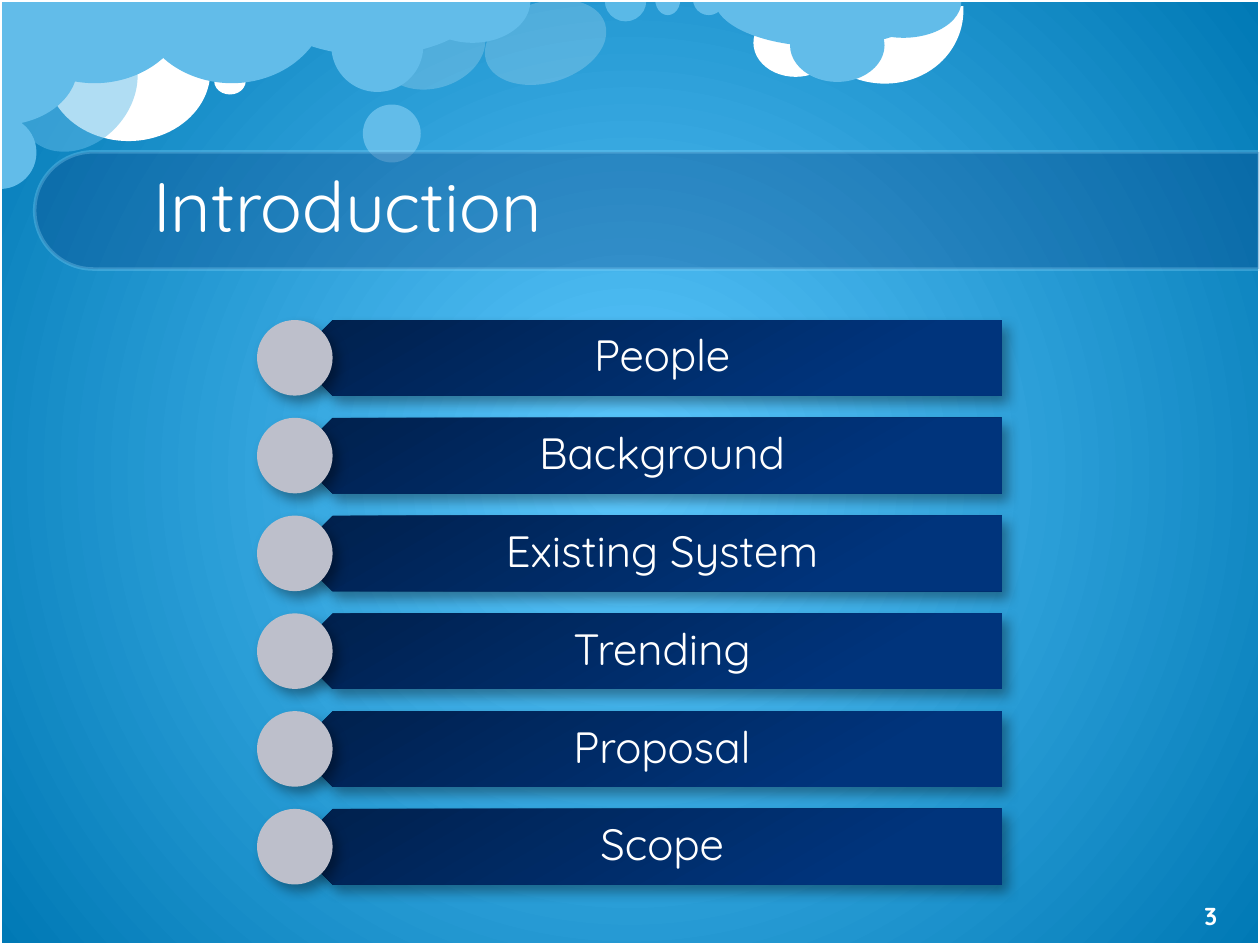
"""Build the Introduction agenda slide with a cloudy sky and six topic bars."""
from dataclasses import dataclass

from lxml import etree
from pptx import Presentation
from pptx.dml.color import RGBColor
from pptx.enum.shapes import MSO_SHAPE
from pptx.enum.text import MSO_ANCHOR, PP_ALIGN
from pptx.oxml.ns import qn
from pptx.util import Inches, Pt

ARC = MSO_SHAPE.ARC
ELLIPSE = MSO_SHAPE.OVAL
PENTAGON = MSO_SHAPE.PENTAGON
PIE = MSO_SHAPE.PIE
RECTANGLE = MSO_SHAPE.RECTANGLE
ROUNDED_END = MSO_SHAPE.ROUND_2_SAME_RECTANGLE
CENTER = PP_ALIGN.CENTER
LEFT = PP_ALIGN.LEFT
MIDDLE = MSO_ANCHOR.MIDDLE


@dataclass(frozen=True)
class Theme:
    font: str = "Quicksand"
    white: str = "FFFFFF"
    cloud: str = "62BCE9"
    pale: str = "8FD9FB"
    sky: tuple = ("5DC9FF", "0079B5")
    banner: str = "073779"
    bar: tuple = ("00204C", "00347C")
    dot: str = "BDBFCB"
    shadow: str = "000000"
    title_size: int = 40
    topic_size: int = 25
    number_size: int = 14


THEME = Theme()


def add_shape(container, kind, box, color, alpha=100, rotation=0, adjustments=()):
    shape = container.shapes.add_shape(kind, *map(Inches, box))
    shape.shadow.inherit = False
    shape.rotation = rotation
    shape.line.fill.background()
    for index, value in enumerate(adjustments):
        shape.adjustments[index] = value
    if color is None:
        shape.fill.background()
        return shape
    shape.fill.solid()
    shape.fill.fore_color.rgb = RGBColor.from_string(color)
    if alpha < 100:
        fill_color = shape.element.spPr.find(".//" + qn("a:srgbClr"))
        etree.SubElement(fill_color, qn("a:alpha"), val=str(alpha * 1000))
    return shape


def add_text(container, box, text, size, alignment=CENTER, bold=False):
    text_box = container.shapes.add_textbox(*map(Inches, box))
    frame = text_box.text_frame
    frame.word_wrap = True
    frame.vertical_anchor = MIDDLE
    paragraph = frame.paragraphs[0]
    paragraph.alignment = alignment
    run = paragraph.add_run()
    run.text = text
    run.font.name = THEME.font
    run.font.size = Pt(size)
    run.font.bold = bold
    run.font.color.rgb = RGBColor.from_string(THEME.white)
    return frame


presentation = Presentation()
presentation.slide_width = Inches(10)
presentation.slide_height = Inches(7.5)
slide = presentation.slides.add_slide(presentation.slide_layouts[6])

sky = slide.background.fill
sky.gradient()
for stop, color in zip(sky.gradient_stops, THEME.sky):
    stop.color.rgb = RGBColor.from_string(color)
sky_gradient = slide.element.find(".//" + qn("a:gradFill"))
direction = sky_gradient.find(qn("a:lin"))
circle = etree.Element(qn("a:path"), path="circle")
etree.SubElement(circle, qn("a:fillToRect"), l="50000", t="50000", r="50000", b="50000")
sky_gradient.replace(direction, circle)

HALF = (0, 108)
CLOUDS = [
    (ELLIPSE, (3.11, -0.05, 0.64, 0.86), THEME.white, 20, 72.8),
    (ELLIPSE, (0.37, 0.01, 1.3, 1.11), THEME.white),
    (ARC, (6.39, -0.6, 1.21, 1.31), THEME.white, 100, 106.5, (151.8, 44.48)),
    (ELLIPSE, (5.98, 0.07, 0.67, 0.54), THEME.white),
    (PIE, (-0.01, -0.66, 1.52, 1.32), THEME.cloud, 100, 0, HALF),
    (PIE, (2.08, -0.44, 1.75, 0.88), THEME.cloud, 100, 0, HALF),
    (ELLIPSE, (2.88, 0.83, 0.46, 0.46), THEME.cloud),
    (ELLIPSE, (0.19, 0.18, 0.85, 1.07), THEME.cloud, 50, 41.8),
    (PIE, (-0.29, 0.92, 0.58, 0.58), THEME.cloud, 100, 270, HALF),
    (ELLIPSE, (1.7, 0.54, 0.25, 0.21), THEME.white),
    (PIE, (1.08, -0.66, 1.52, 1.32), THEME.cloud, 100, 0, HALF),
    (PIE, (5.67, -0.38, 1.75, 0.75), THEME.cloud, 100, 0, HALF),
    (ELLIPSE, (6.27, 0.07, 0.75, 0.58), THEME.cloud),
    (PIE, (6.71, -0.28, 0.92, 0.58), THEME.cloud, 100, 0, HALF),
    (ELLIPSE, (4.01, -0.16, 0.64, 0.99), THEME.white, 20, 72.8),
    (PIE, (4.8, -0.16, 0.33, 0.33), THEME.pale, 50, 0, HALF),
    (PIE, (5.2, -0.13, 0.2, 0.25), THEME.cloud, 100, 0, HALF),
    (PIE, (5.5, -0.13, 0.25, 0.25), THEME.cloud, 100, 0, HALF),
    (ELLIPSE, (2.63, 0, 0.73, 0.73), THEME.cloud),
    (PIE, (3.29, -0.33, 0.92, 0.67), THEME.cloud, 100, 0, HALF),
    (PIE, (-0.47, -0.09, 0.93, 1.24), THEME.cloud, 100, 270, HALF),
]
clouds = slide.shapes.add_group_shape()
for cloud in CLOUDS:
    add_shape(clouds, *cloud)

border = add_shape(slide, RECTANGLE, (0, 0, 10, 7.5), None)
banner = add_shape(slide, ROUNDED_END, (4.67, -3.19, 0.93, 9.72), THEME.banner, 30, 270, (0.5, 0))
for outlined, color in ((border, THEME.white), (banner, THEME.pale)):
    outlined.line.color.rgb = RGBColor.from_string(color)
    outlined.line.width = Pt(2)
banner_line = banner.element.spPr.find(qn("a:ln")).find(".//" + qn("a:srgbClr"))
etree.SubElement(banner_line, qn("a:alpha"), val="30000")

title = add_text(slide, (1.12, 1.18, 8.1, 0.78), "Introduction", THEME.title_size, LEFT)
title.paragraphs[0].line_spacing = Pt(56)
add_text(slide, (9.22, 7.05, 0.78, 0.43), "3", THEME.number_size, bold=True)

TOPICS = ["People", "Background", "Existing System", "Trending", "Proposal", "Scope"]
FIRST_TOP, LAST_TOP, BAR_HEIGHT = 2.54, 6.42, 0.6
pitch = (LAST_TOP - FIRST_TOP) / (len(TOPICS) - 1)
agenda = slide.shapes.add_group_shape()
for index, topic in enumerate(TOPICS):
    top = FIRST_TOP + index * pitch
    bar = add_shape(agenda, PENTAGON, (2.34, top, 5.61, BAR_HEIGHT), THEME.bar[0], rotation=180)
    bar.fill.gradient()
    bar.fill.gradient_angle = 120
    for stop, color, position in zip(bar.fill.gradient_stops, THEME.bar, (0, 0.8)):
        stop.color.rgb = RGBColor.from_string(color)
        stop.position = position

    label = add_text(agenda, (2.49, top, 5.46, BAR_HEIGHT), topic, THEME.topic_size)
    label.margin_left, label.margin_right = Inches(0.26), Inches(0.19)
    label.margin_top = label.margin_bottom = Inches(0.1)
    label.paragraphs[0].line_spacing = 0.9
    label.paragraphs[0].space_after = Pt(8.75)

    dot = add_shape(agenda, ELLIPSE, (2.04, top, BAR_HEIGHT, BAR_HEIGHT), THEME.dot)
    for shape in (bar, dot):
        effects = shape.element.spPr.find(qn("a:effectLst"))
        shadow = etree.SubElement(
            effects, qn("a:outerShdw"), blurRad=str(Pt(7)), dist=str(Pt(5)),
            dir="3000000", algn="tl", rotWithShape="0",
        )
        shadow_color = etree.SubElement(shadow, qn("a:srgbClr"), val=THEME.shadow)
        etree.SubElement(shadow_color, qn("a:alpha"), val="35000")

presentation.save("out.pptx")
